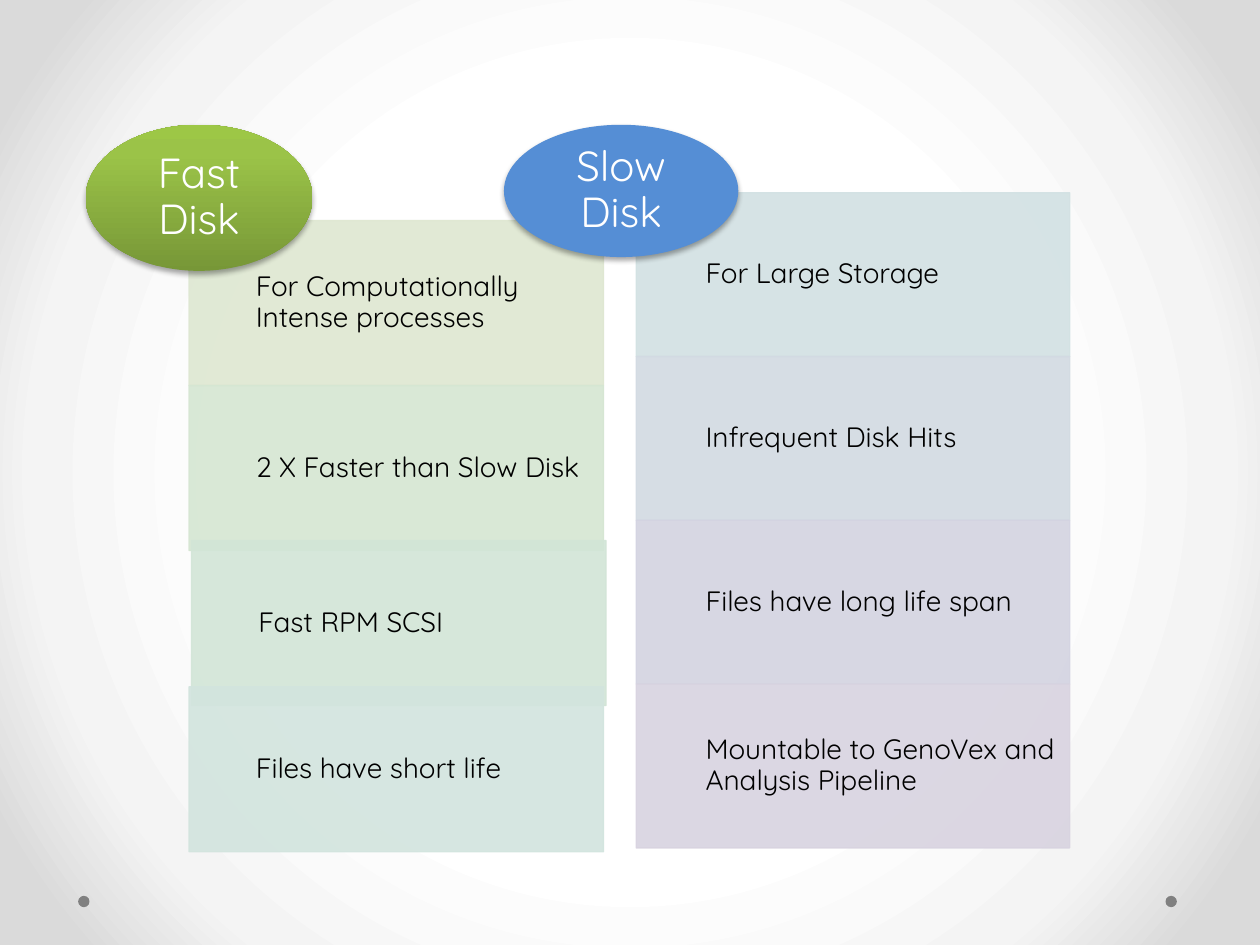
from dataclasses import dataclass

import pptx
import pptx.dml.color
import pptx.enum.shapes
import pptx.enum.text
import pptx.oxml
import pptx.oxml.ns
import pptx.util

Inches, Pt = pptx.util.Inches, pptx.util.Pt
MSO_SHAPE = pptx.enum.shapes.MSO_SHAPE
PP_ALIGN = pptx.enum.text.PP_ALIGN


@dataclass(frozen=True)
class Theme:
    font: str = "Quicksand"
    heading_size: int = 24
    row_size: int = 16
    text: str = "000000"
    heading_text: str = "FFFFFF"
    dot: str = "808080"
    slow: str = "558ED5"
    fast: tuple = ((0, "779737"), (80, "9BC348"), (100, "9DC746"))
    background: tuple = ((50, "FFFFFF"), (76, "F4F4F4"), (92, "DADADA"))


THEME = Theme()
LINEAR_UP = '<a:lin ang="16200000" scaled="0"/>'
CIRCLE = ('<a:path path="circle"><a:fillToRect l="50000" t="50000" '
          'r="50000" b="50000"/></a:path>')

# Rows: text, colour, left, top
FAST_ROWS = [
    ("For Computationally Intense processes", "DEE7D1", 1.5, 1.75),
    ("2 X Faster than Slow Disk", "D5E6D2", 1.5, 3.06),
    ("Fast RPM SCSI", "D2E5D7", 1.52, 4.29),
    ("Files have short life", "D2E4DE", 1.5, 5.45),
]
SLOW_ROWS = [
    (text, color, 5.05, 1.53 + 1.3 * i)
    for i, (text, color) in enumerate([
        ("For Large Storage", "D2E1E3"),
        ("Infrequent Disk Hits", "D2DAE2"),
        ("Files have long life span", "D3D3E1"),
        ("Mountable to GenoVex and Analysis Pipeline", "D8D3E0"),
    ])
]


def rgb(color):
    return pptx.dml.color.RGBColor.from_string(color)


def xml(text):
    """Parse an element whose tag has the a: prefix."""
    ns = pptx.oxml.ns.nsdecls("a")
    tag, rest = text.split(" ", 1)
    return pptx.oxml.parse_xml(f"{tag} {ns} {rest}")


def set_gradient(fill, parent, stops, direction):
    """Put a gradient with any number of stops in place of a fill."""
    fill.background()
    gs = "".join(f'<a:gs pos="{pos * 1000}"><a:srgbClr val="{color}"/></a:gs>'
                 for pos, color in stops)
    old = parent.find(pptx.oxml.ns.qn("a:noFill"))
    parent.replace(old, xml(f'<a:gradFill rotWithShape="1"><a:gsLst>{gs}'
                            f'</a:gsLst>{direction}</a:gradFill>'))


def set_alpha(sp, percent):
    """Make the solid fill and line of a shape partly transparent."""
    for color in sp._element.spPr.iter(pptx.oxml.ns.qn("a:srgbClr")):
        color.append(xml(f'<a:alpha val="{percent * 1000}"/>'))


def add_drop_shadow(sp):
    effects = sp._element.spPr.find(pptx.oxml.ns.qn("a:effectLst"))
    effects.append(xml(
        f'<a:outerShdw blurRad="{Pt(3.1)}" dist="{Pt(1.8)}" dir="5400000" '
        'rotWithShape="0"><a:srgbClr val="000000"><a:alpha val="35000"/>'
        '</a:srgbClr></a:outerShdw>'))


def add_shape(s, kind, left, top, width, height, color):
    sp = s.shapes.add_shape(kind, Inches(left), Inches(top),
                            Inches(width), Inches(height))
    sp.shadow.inherit = False
    sp.fill.solid()
    sp.fill.fore_color.rgb = rgb(color)
    sp.line.fill.background()
    return sp


def set_text(sp, text, size, color, align, margins):
    tf = sp.text_frame
    tf.word_wrap = True
    tf.vertical_anchor = pptx.enum.text.MSO_ANCHOR.MIDDLE
    (tf.margin_left, tf.margin_top,
     tf.margin_right, tf.margin_bottom) = map(Inches, margins)
    p = tf.paragraphs[0]
    p.text = text
    p.alignment = align
    p.line_spacing = 0.9
    p.font.name = THEME.font
    p.font.size = Pt(size)
    p.font.color.rgb = rgb(color)


def add_rows(s, rows, width, height, indent):
    for text, color, left, top in rows:
        sp = add_shape(s, MSO_SHAPE.RECTANGLE, left, top, width, height, color)
        sp.line.color.rgb = rgb(color)
        sp.line.width = Pt(0.75)
        set_alpha(sp, 90)
        set_text(sp, text, THEME.row_size, THEME.text, PP_ALIGN.LEFT,
                 (indent, 0.12, 0.12, 0.12))


def add_heading(s, text, left, top, width, height, color):
    sp = add_shape(s, MSO_SHAPE.OVAL, left, top, width, height, color)
    add_drop_shadow(sp)
    set_text(sp, text, THEME.heading_size, THEME.heading_text,
             PP_ALIGN.CENTER, (0, 0, 0, 0))
    return sp


def set_background(s):
    fill = s.background.fill
    fill.background()
    set_gradient(fill, s._element.cSld.bg.bgPr, THEME.background, CIRCLE)


def main():
    prs = pptx.Presentation()
    prs.slide_width, prs.slide_height = Inches(10), Inches(7.5)
    s = prs.slides.add_slide(prs.slide_layouts[6])
    set_background(s)

    for left in (0.62, 9.25):
        add_shape(s, MSO_SHAPE.OVAL, left, 7.11, 0.09, 0.09, THEME.dot)

    add_rows(s, FAST_ROWS, 3.29, 1.31, indent=0.53)
    fast = add_heading(s, "Fast Disk", 0.68, 0.99, 1.8, 1.16, THEME.fast[0][1])
    set_gradient(fast.fill, fast._element.spPr, THEME.fast, LINEAR_UP)

    add_rows(s, SLOW_ROWS, 3.44, 1.3, indent=0.55)
    add_heading(s, "Slow Disk", 4, 0.99, 1.86, 1.05, THEME.slow)

    prs.save("out.pptx")


if __name__ == "__main__":
    main()
